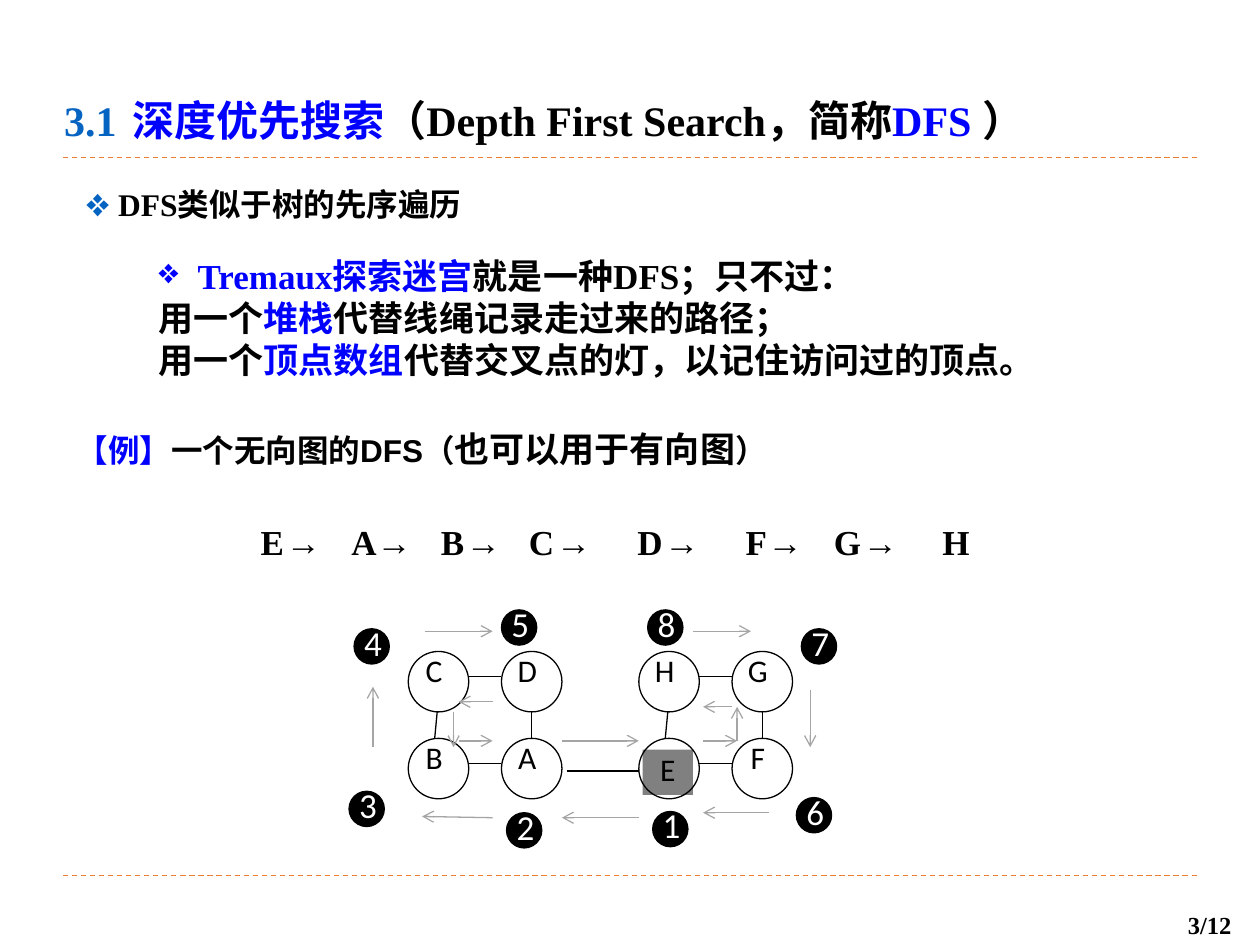
"""Build the slide on depth-first search with its numbered graph walk."""
from lxml.etree import SubElement
from pptx import Presentation
from pptx.dml.color import RGBColor
from pptx.enum.dml import MSO_LINE_DASH_STYLE as Dash
from pptx.enum.shapes import MSO_CONNECTOR as Connector, MSO_SHAPE as Shape
from pptx.enum.text import MSO_ANCHOR as Anchor, MSO_AUTO_SIZE as AutoSize, PP_ALIGN as Align
from pptx.oxml.ns import qn
from pptx.util import Inches, Pt

COLORS = {
    "black": "000000",
    "white": "FFFFFF",
    "blue": "0000FF",
    "accent": "0563C1",
    "rule": "ED7D31",
    "step": "A5A5A5",
    "start": "808080",
}
PALETTE = {name: RGBColor.from_string(code) for name, code in COLORS.items()}
SERIF = {"name": "Times New Roman", "bold": True}
SANS = {"name": "Arial", "bold": True}
LABEL = {"name": "Calibri", "bold": False}
NO_INSETS = dict.fromkeys(["margin_left", "margin_top", "margin_right", "margin_bottom"], 0)
GROW = {"word_wrap": True, "auto_size": AutoSize.SHAPE_TO_FIT_TEXT}

deck = Presentation()
deck.slide_width, deck.slide_height = Inches(10), Inches(7.5)
page = deck.slides.add_slide(deck.slide_layouts[6])


def write(box, lines, font, layout=GROW, align=Align.LEFT):
    """Fill a shape with paragraphs of (text, color, size, font changes) spans."""
    frame = box.text_frame
    for key, value in layout.items():
        setattr(frame, key, value)
    for number, line in enumerate(lines):
        para = frame.paragraphs[0] if number == 0 else frame.add_paragraph()
        para.alignment = align
        for text, color, size, *changes in line:
            span = para.add_run()
            span.text = text
            look = {**font, "size": Pt(size)}
            for change in changes:
                look.update(change)
            for key, value in look.items():
                setattr(span.font, key, value)
            span.font.color.rgb = PALETTE[color]
    return frame.paragraphs


def draw_line(ends, color, dash=None, arrow=False):
    """Draw a thin straight line, dashed or with an arrowhead at its end."""
    line = page.shapes.add_connector(Connector.STRAIGHT, *map(Inches, ends))
    line.line.color.rgb = PALETTE[color]
    line.line.width = Pt(0.75)
    if dash:
        line.line.dash_style = dash
    if arrow:
        SubElement(line.line._get_or_add_ln(), qn("a:tailEnd"), type="arrow")
    SubElement(line._element.spPr, qn("a:effectLst"))


for y in (6.95, 1.25):
    draw_line((0.5, y, 9.5, y), "rule", dash=Dash.DASH)

text_blocks = [
    ((0.41, 0.7, 8.75, 0.5), SERIF, [
        ("3.1", "accent", 24), ("  ", "accent", 18), ("深度优先搜索", "blue", 24),
        ("（Depth First Search，简称", "black", 24), ("DFS ", "blue", 24), ("）", "black", 24)]),
    ((0.58, 1.42, 8.75, 0.4), SERIF, [
        ("❖ ", "accent", 18), ("DFS类似于树的先序遍历", "black", 18)]),
    ((0.51, 3.34, 8.12, 0.44), SANS, [
        ("【例】", "blue", 18), ("一个无向图的DFS（", "black", 18),
        ("也可以用于有向图", "black", 20), ("）", "black", 18)]),
    ((9.33, 7.17, 0.67, 0.34), SERIF, [("3/12", "black", 14)]),
]
for place, font, line in text_blocks:
    write(page.shapes.add_textbox(*map(Inches, place)), [line], font)

maze_box = page.shapes.add_textbox(*map(Inches, (0.66, 1.97, 8.08, 1.11)))
maze_paras = write(maze_box, [
    [("Tremaux探索迷宫", "blue", 20), ("就是一种DFS；只不过：", "black", 20)],
    [("用一个", "black", 20), ("堆栈", "blue", 20), ("代替线绳记录走过来的路径；", "black", 20)],
    [("用一个", "black", 20), ("顶点数组", "blue", 20),
     ("代替交叉点的灯，以记住访问过的顶点。", "black", 20)],
], SERIF)
for number, para in enumerate(maze_paras):
    props = para._p.get_or_add_pPr()
    props.set("marL", str(Inches(0.81)))
    props.set("indent", str(Inches(-0.31)))
    if number == 0:
        SubElement(props, qn("a:buChar"), char="❖")
    else:
        SubElement(props, qn("a:buNone"))

edges = [(4.5, 6.12, 5.07, 6.12)]
for left in (3.24, 5.07):
    edges += [(left + 0.48, y, left + 0.74, y) for y in (5.37, 6.06)]
    edges += [(left + 0.98, 5.65, left + 0.98, 5.86), (left + 0.23, 5.65, left + 0.21, 5.86)]
for ends in edges:
    draw_line(ends, "black")

node_columns = (3.24, 3.98, 5.07, 5.81)
for top, letters in ((5.17, "CDHG"), (5.86, "BAEF")):
    for left, letter in zip(node_columns, letters):
        is_start = letter == "E"
        place = (left + 0.03, top + 0.09, 0.4, 0.36) if is_start else (left, top, 0.41, 0.36)
        tile = page.shapes.add_shape(Shape.RECTANGLE, *map(Inches, place))
        tile.shadow.inherit = False
        tile.fill.solid()
        tile.fill.fore_color.rgb = PALETTE["start" if is_start else "white"]
        tile.line.fill.background()
        write(tile, [[(letter, "black", 18)]], LABEL,
              {**NO_INSETS, "word_wrap": True, "vertical_anchor": Anchor.TOP}, Align.CENTER)
        ring = page.shapes.add_shape(Shape.OVAL, *map(Inches, (left, top, 0.48, 0.48)))
        ring.shadow.inherit = False
        ring.fill.background()
        ring.line.color.rgb = PALETTE["black"]
        ring.line.width = Pt(0.75)

badges = [(5.18, 6.44), (4.02, 6.45), (2.77, 6.28), (2.81, 4.99),
          (3.98, 4.84), (6.32, 6.33), (6.36, 4.99), (5.14, 4.84)]
for number, (left, top) in enumerate(badges, 1):
    badge = page.shapes.add_shape(Shape.OVAL, *map(Inches, (left, top, 0.28, 0.28)))
    badge.shadow.inherit = False
    badge.fill.solid()
    badge.fill.fore_color.rgb = PALETTE["black"]
    badge.line.color.rgb = PALETTE["black"]
    badge.line.width = Pt(0.75)
    digit = page.shapes.add_textbox(*map(Inches, (left + 0.08, top - 0.06, 0.24, 0.35)))
    write(digit, [[(str(number), "white", 20)]], LABEL,
          {**NO_INSETS, "word_wrap": True}, Align.JUSTIFY)

steps = [
    (5.07, 6.49, 4.46, 6.49), (3.6, 5.65, 3.6, 5.93), (4.46, 5.88, 5.07, 5.88),
    (5.81, 5.61, 5.58, 5.61), (6.1, 6.45, 5.58, 6.45), (3.64, 5.88, 3.91, 5.88),
    (2.96, 5.93, 2.96, 5.45), (3.91, 6.49, 3.35, 6.48), (5.85, 5.88, 5.85, 5.61),
    (6.43, 5.48, 6.43, 5.93), (3.37, 5.01, 3.91, 5.01), (3.91, 5.57, 3.64, 5.57),
    (5.5, 5.01, 5.96, 5.01), (5.58, 5.88, 5.85, 5.88),
]
for ends in steps:
    draw_line(ends, "step", arrow=True)

visits = [("E", 1.68, 1.09), ("A", 2.69, 0.62), ("B", 3.4, 0.62), ("C", 4.1, 0.64),
          ("D", 4.96, 0.64), ("F", 5.82, 0.6), ("G", 6.52, 0.65), ("H", 7.38, 0.42)]
for letter, left, width in visits:
    box = page.shapes.add_textbox(*map(Inches, (left, 4.08, width, 0.44)))
    line = [(letter, "black", 20)]
    if letter != "H":
        line = [(f"{letter} ", "black", 20), ("→", "black", 20, {"name": "Courier New"})]
    is_first = letter == "E"
    layout = {**GROW, "word_wrap": is_first,
              "vertical_anchor": Anchor.MIDDLE if is_first else Anchor.TOP}
    paras = write(box, [line], SERIF, layout)
    if is_first:
        paras[0]._p.get_or_add_pPr().set("indent", str(Inches(0.29)))

deck.save("out.pptx")
